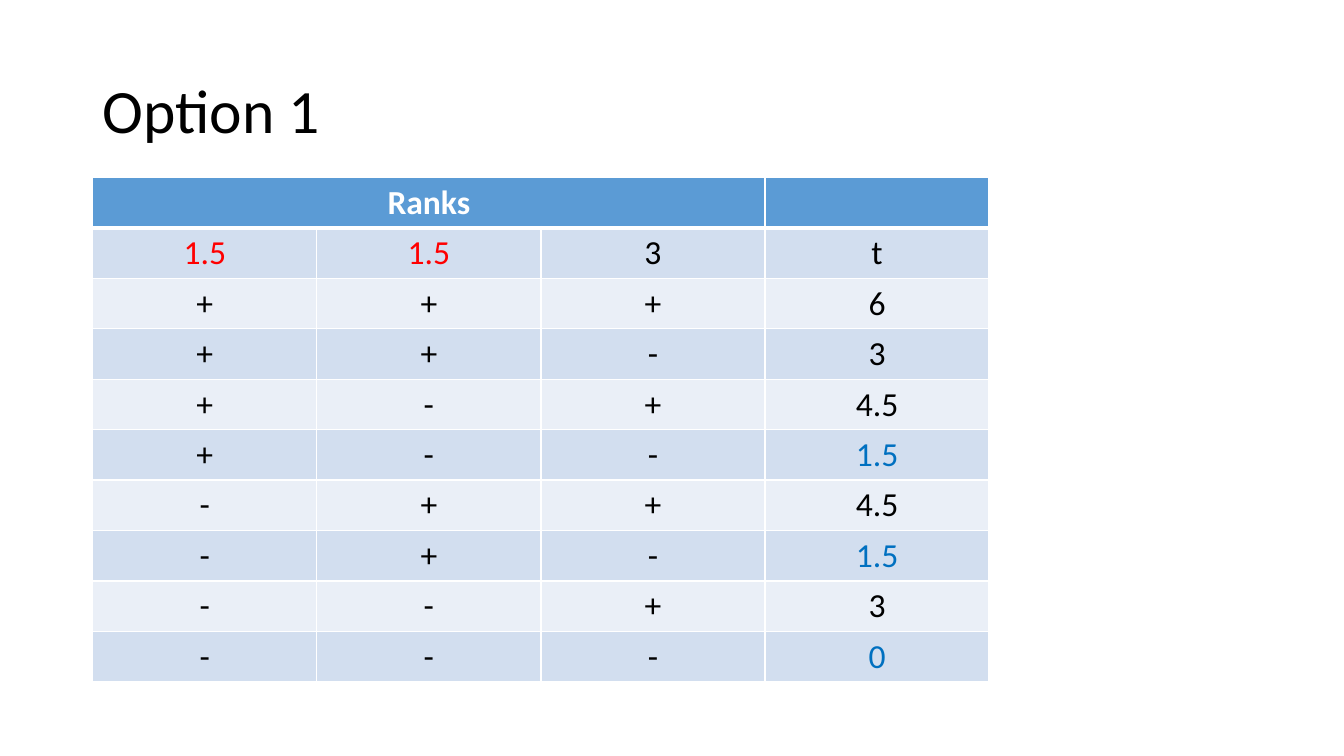
from itertools import product

from lxml.etree import SubElement
from pptx import Presentation
from pptx.dml.color import RGBColor
from pptx.enum.text import MSO_ANCHOR as ANCHOR, PP_ALIGN as ALIGN
from pptx.oxml.ns import qn
from pptx.util import Inches, Pt

BLACK, WHITE, RED, BLUE = "000000", "FFFFFF", "FF0000", "0070C0"
HEADER, BAND_DARK, BAND_LIGHT = "5B9BD5", "D2DEEF", "EAEFF7"


def rgb(value):
    return RGBColor.from_string(value)


class SlideBuilder:
    font = "Calibri"

    def __init__(self, slide):
        self.slide = slide

    def add_text(self, tf, text, color, **formats):
        """Put one run of text in the first paragraph and return the paragraph."""
        p = tf.paragraphs[0]
        r = p.add_run()
        r.text = text
        for name, value in {"name": self.font, **formats}.items():
            setattr(r.font, name, value)
        r.font.color.rgb = rgb(color)
        return p

    def title(self, text, left, top, width, height):
        box = self.slide.shapes.add_textbox(
            Inches(left), Inches(top), Inches(width), Inches(height))
        tf = box.text_frame
        tf.word_wrap = True
        tf.vertical_anchor = ANCHOR.MIDDLE
        self.add_text(tf, text, BLACK, size=Pt(44)).line_spacing = 0.9

    def border(self, cell, bottom):
        """Draw white cell edges, 1 pt except for the given bottom width."""
        tc_pr = cell._tc.get_or_add_tcPr()
        for side, width in {"L": 1, "R": 1, "T": 1, "B": bottom}.items():
            ln = SubElement(tc_pr, qn(f"a:ln{side}"), w=str(Pt(width)))
            fill = SubElement(ln, qn("a:solidFill"))
            SubElement(fill, qn("a:srgbClr"), val=WHITE)

    def table(self, rows, left, top, width, height):
        """Draw a banded table from rows of (text, colour) pairs."""
        frame = self.slide.shapes.add_table(
            len(rows), len(rows[0]),
            Inches(left), Inches(top), Inches(width), Inches(height))
        table = frame.table
        for i, row in enumerate(rows):
            band = BAND_DARK if i % 2 else BAND_LIGHT
            for j, (text, color) in enumerate(row):
                cell = table.cell(i, j)
                self.border(cell, bottom=1 if i else 3)
                cell.fill.solid()
                cell.fill.fore_color.rgb = rgb(band if i else HEADER)
                if text:
                    p = self.add_text(cell.text_frame, text, color,
                                      size=Pt(24), bold=i == 0)
                    p.alignment = ALIGN.CENTER
        return table


def rank_rows(ranks):
    """List every sign pattern with t, the sum of its positive ranks."""
    rows = [[("Ranks", WHITE)] + [("", WHITE)] * len(ranks)]
    rows.append([(f"{rank:g}", RED if ranks.count(rank) > 1 else BLACK)
                 for rank in ranks] + [("t", BLACK)])
    for signs in product("+-", repeat=len(ranks)):
        t = sum(rank for rank, sign in zip(ranks, signs) if sign == "+")
        rows.append([(sign, BLACK) for sign in signs]
                    + [(f"{t:g}", BLUE if t <= 1.5 else BLACK)])
    return rows


def main():
    prs = Presentation()
    prs.slide_width, prs.slide_height = Inches(13.33), Inches(7.5)
    builder = SlideBuilder(prs.slides.add_slide(prs.slide_layouts[6]))
    builder.title("Option 1", 0.92, 0.4, 11.5, 1.45)
    ranks = [1.5, 1.5, 3]
    table = builder.table(rank_rows(ranks), 0.92, 1.76, 8.89, 5)
    table.cell(0, 0).merge(table.cell(0, len(ranks) - 1))
    prs.save("out.pptx")


if __name__ == "__main__":
    main()
